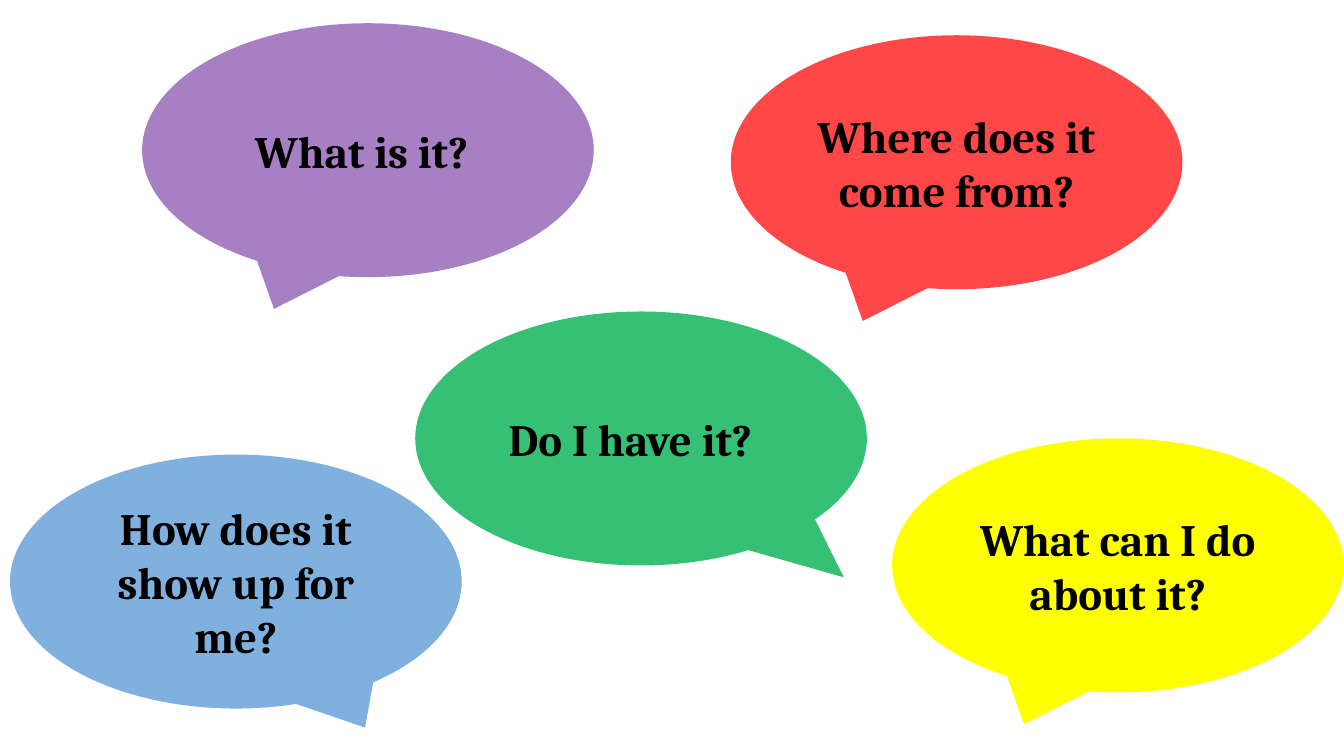
"""Build a slide of five coloured speech bubbles, each asking a question."""
import lxml.etree
import pptx
import pptx.dml.color
import pptx.enum.shapes
import pptx.enum.text
import pptx.oxml.ns
import pptx.util

Pt = pptx.util.Pt


def paint(fill, color, opacity=100):
    fill.solid()
    fill.fore_color.rgb = pptx.dml.color.RGBColor.from_string(color)
    if opacity < 100:
        tint = fill._xPr.find(".//" + pptx.oxml.ns.qn("a:srgbClr"))
        alpha = lxml.etree.SubElement(tint, pptx.oxml.ns.qn("a:alpha"))
        alpha.set("val", str(opacity * 1000))


def write(frame, text, size=32, font="Cambria", color="000000", bold=True, right_inset=7.2):
    frame.word_wrap = True
    frame.margin_right = Pt(right_inset)
    frame.vertical_anchor = pptx.enum.text.MSO_ANCHOR.MIDDLE
    paragraph = frame.paragraphs[0]
    paragraph.alignment = pptx.enum.text.PP_ALIGN.CENTER
    run = paragraph.add_run()
    run.text = text
    run.font.size = Pt(size)
    run.font.name = font
    run.font.bold = bold
    paint(run.font.fill, color)


deck = pptx.Presentation()
deck.slide_width, deck.slide_height = Pt(960), Pt(540)
slide = deck.slides.add_slide(deck.slide_layouts[6])

bubble_width, bubble_height = 322.6, 181.4
tail_left = (-0.208, 0.625)

questions = [
    ("What is it?", 101.5, 16.6, "7030A0", 61, tail_left, 16),
    ("Do I have it?", 296.6, 222.5, "00B050", 79, (0.449, 0.547), 22),
    ("Where does it come from?", 522, 25.2, "FF0000", 72, tail_left, 7.2),
    ("How does it show up for me?", 7.2, 324.7, "5B9BD5", 78, (0.286, 0.575), 7.2),
    ("What can I do about it?", 637.2, 313.2, "FFFF00", 100, tail_left, 7.2),
]

for question, left, top, color, opacity, tail, right_inset in questions:
    bubble = slide.shapes.add_shape(
        pptx.enum.shapes.MSO_SHAPE.OVAL_CALLOUT,
        Pt(left), Pt(top), Pt(bubble_width), Pt(bubble_height),
    )
    bubble.shadow.inherit = False
    bubble.adjustments[0], bubble.adjustments[1] = tail
    paint(bubble.fill, color, opacity)
    bubble.line.fill.background()
    write(bubble.text_frame, question, right_inset=right_inset)

deck.save("out.pptx")
